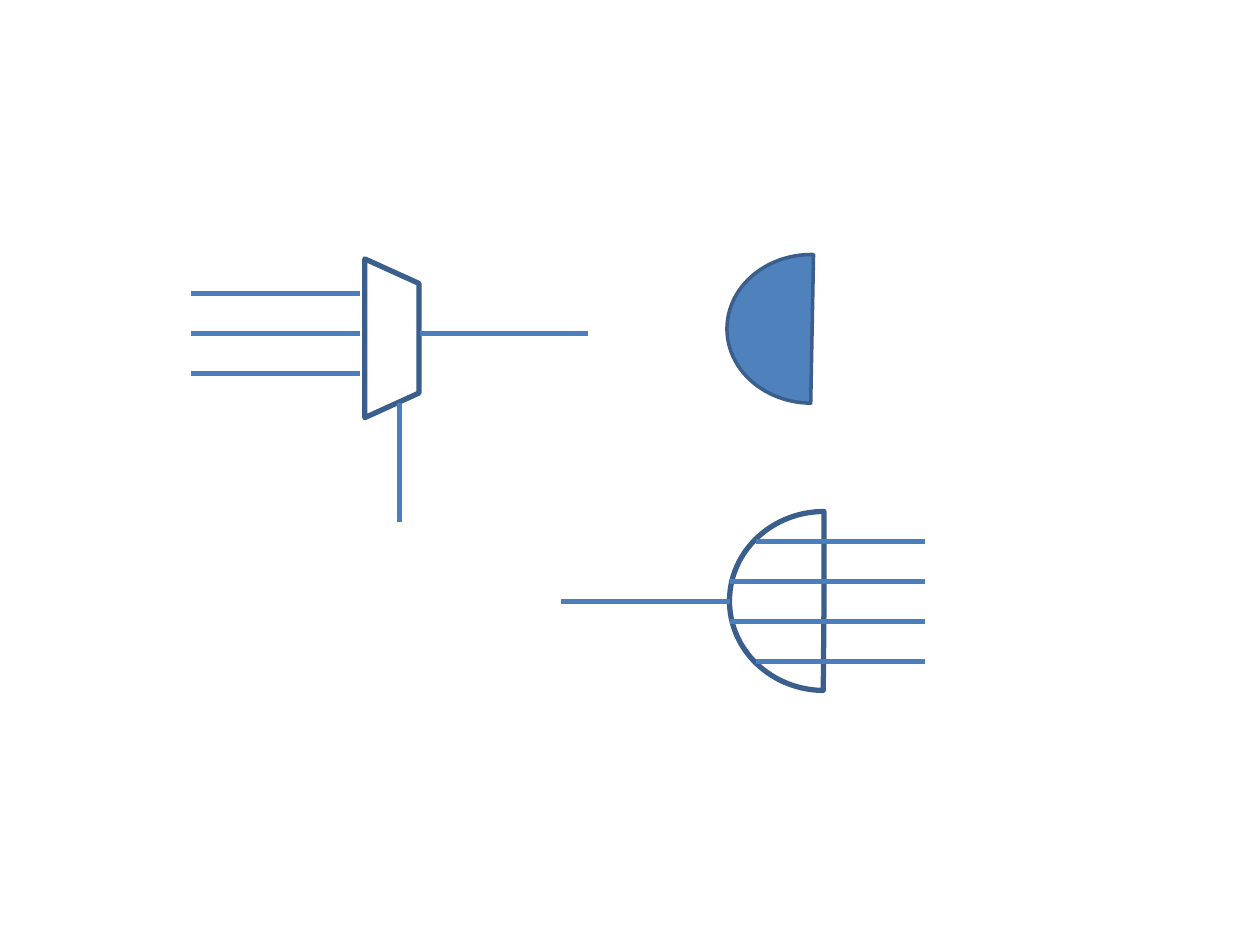
import dataclasses

import pptx
import pptx.dml.color
import pptx.enum.shapes
import pptx.oxml
import pptx.util

Pt = pptx.util.Pt
RGB = pptx.dml.color.RGBColor
SHAPES = pptx.enum.shapes.MSO_SHAPE
STRAIGHT = pptx.enum.shapes.MSO_CONNECTOR.STRAIGHT


@dataclasses.dataclass(frozen=True)
class Theme:
    body: RGB = RGB(0x4F, 0x81, 0xBD)
    outline: RGB = RGB(0x3A, 0x5F, 0x8C)
    wire: RGB = RGB(0x4B, 0x7E, 0xBC)
    thin: float = 2
    thick: float = 3


class Schematic:
    def __init__(self, slide, theme):
        self.slide = slide
        self.theme = theme

    def group(self):
        return self.slide.shapes.add_group_shape().shapes

    def gate(self, parent, kind, box, adjustments, width, fill=None, rotation=0):
        gate = parent.add_shape(kind, *map(Pt, box))
        for index, value in enumerate(adjustments):
            gate.adjustments[index] = value
        gate.rotation = rotation
        gate.shadow.inherit = False
        if fill is None:
            gate.fill.background()
        else:
            gate.fill.solid()
            gate.fill.fore_color.rgb = fill
        self.stroke(gate.line, self.theme.outline, width)

    def wire(self, parent, start, end):
        wire = parent.add_connector(STRAIGHT, *map(Pt, (*start, *end)))
        properties = wire.element.spPr
        self.stroke(wire.line, self.theme.wire, self.theme.thick)
        properties.append(pptx.oxml.parse_xml(
            '<a:effectLst xmlns:a="http://schemas.openxmlformats.org/drawingml/2006/main"/>'))

    def stroke(self, line, color, width):
        line.fill.solid()
        formats = {"color.rgb": color, "width": Pt(width)}
        for name, value in formats.items():
            owner, _, attribute = name.rpartition(".")
            setattr(getattr(line, owner) if owner else line, attribute, value)


def draw_or_gate(schematic):
    gate = schematic.group()
    left, right, middle, pitch = 416.88, 528.48, 343.8, 22.8
    schematic.gate(gate, SHAPES.PIE, (left, 292.32, 108, 102.24),
                   (54.267, 162), schematic.theme.thick)
    for step in (-1.5, -0.5, 0.5, 1.5):
        y = middle + step * pitch
        start = 432 if abs(step) > 1 else left
        schematic.wire(gate, (start, y), (right, y))
    schematic.wire(gate, (320.4, middle), (left, middle))


def draw_multiplexer(schematic):
    multiplexer = schematic.group()
    middle, pitch = 190.5, 22.8
    schematic.gate(multiplexer, SHAPES.TRAPEZOID, (178.56, 177.84, 90.72, 30.96),
                   (0.454,), schematic.theme.thick, rotation=90)
    for step in (-1, 0, 1):
        y = middle + step * pitch
        schematic.wire(multiplexer, (109.2, y), (205.5, y))
    schematic.wire(multiplexer, (239.76, middle), (336, middle))
    schematic.wire(multiplexer, (228.24, 298.08), (228.24, 230.4))


def main():
    presentation = pptx.Presentation()
    presentation.slide_width = Pt(720)
    presentation.slide_height = Pt(540)
    slide = presentation.slides.add_slide(presentation.slide_layouts[6])
    theme = Theme()
    schematic = Schematic(slide, theme)
    schematic.gate(slide.shapes, SHAPES.CHORD, (415.44, 145.44, 96.48, 84.96),
                   (54.309, 162.989), theme.thin, fill=theme.body)
    draw_or_gate(schematic)
    draw_multiplexer(schematic)
    presentation.save("out.pptx")


if __name__ == "__main__":
    main()
